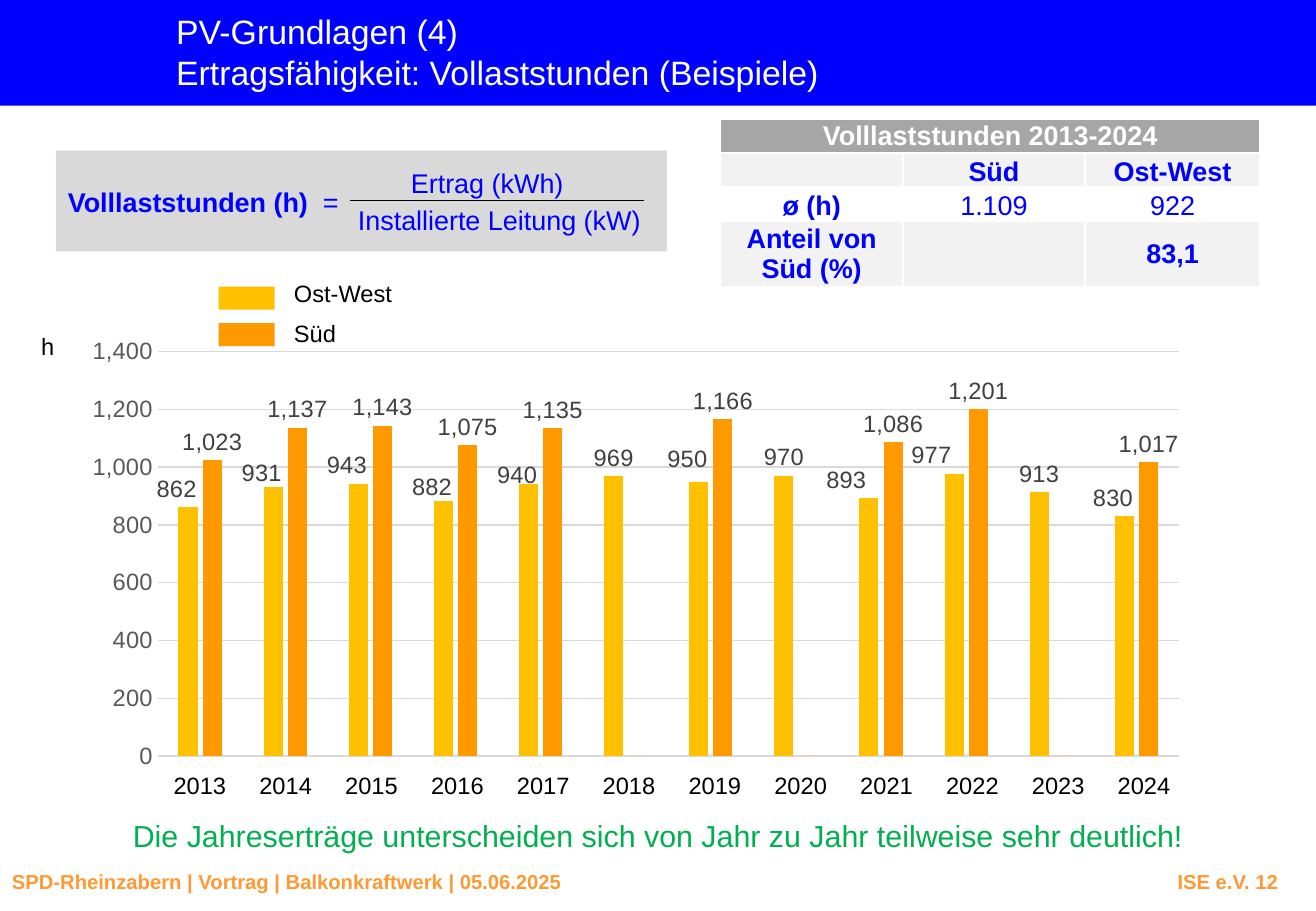
from dataclasses import dataclass

from pptx import Presentation
from pptx.chart.data import CategoryChartData
from pptx.dml.color import RGBColor
from pptx.enum.chart import XL_CHART_TYPE, XL_LABEL_POSITION as LabelPos, XL_TICK_MARK
from pptx.enum.shapes import MSO_CONNECTOR, MSO_SHAPE
from pptx.enum.text import MSO_ANCHOR, MSO_AUTO_SIZE, PP_ALIGN
from pptx.oxml import parse_xml
from pptx.oxml.ns import nsdecls
from pptx.util import Inches, Pt


@dataclass(frozen=True)
class Theme:
    font: str = "Arial"
    blue: str = "0000FF"
    white: str = "FFFFFF"
    black: str = "000000"
    green: str = "00B050"
    footer: str = "FF9933"
    formula_bg: str = "D9D9D9"
    header_bg: str = "A6A6A6"
    cell_bg: str = "F2F2F2"
    grid: str = "D9D9D9"
    axis_text: str = "595959"
    label_text: str = "404040"
    east_west: str = "FFC000"
    south: str = "FF9900"
    title_size: int = 20
    message_size: int = 18
    body_size: int = 16
    chart_size: int = 14
    footer_size: int = 12


THEME = Theme()
EAST_WEST = [862, 931, 943, 882, 940, 969, 950, 970, 893, 977, 913, 830]
SOUTH = [1023, 1137, 1143, 1075, 1135, 0, 1166, 0, 1086, 1201, 0, 1017]
# Label offsets (right, down) as fractions of the chart, by position in EAST_WEST
LABEL_SHIFTS = {0: (-0.01, 0), 1: (-0.01, 0.01), 2: (-0.01, 0), 3: (-0.01, 0.01),
                4: (-0.01, 0.02), 6: (-0.01, -0.01), 8: (-0.02, 0), 9: (-0.02, 0),
                11: (-0.01, 0)}
NUMBER_FORMAT = "#,##0;;"  # zeros stay blank


def style_font(font, size, color, bold=False):
    font.name, font.size, font.bold = THEME.font, Pt(size), bold
    font.color.rgb = RGBColor.from_string(color)


def add_run(paragraph, text, size, color, bold=False):
    run = paragraph.add_run()
    run.text = text
    style_font(run.font, size, color, bold)


def add_rect(slide, left, top, width, height, color):
    rect = slide.shapes.add_shape(MSO_SHAPE.RECTANGLE, Inches(left), Inches(top),
                                  Inches(width), Inches(height))
    rect.shadow.inherit = False
    rect.fill.solid()
    rect.fill.fore_color.rgb = RGBColor.from_string(color)
    rect.line.fill.background()
    return rect


def add_label(slide, left, top, width, height, text, size, color,
              bold=False, align=PP_ALIGN.LEFT, wrap=False):
    box = slide.shapes.add_textbox(Inches(left), Inches(top), Inches(width), Inches(height))
    box.text_frame.word_wrap = wrap
    paragraph = box.text_frame.paragraphs[0]
    paragraph.alignment = align
    add_run(paragraph, text, size, color, bold)
    return box


def add_header(slide):
    band = add_rect(slide, -0.01, 0, 10.84, 0.87, THEME.blue)
    title = slide.shapes.title
    band._element.addnext(title._element)
    title.left, title.top = Inches(1.45), Inches(0.09)
    title.width, title.height = Inches(8.69), Inches(0.67)
    frame = title.text_frame
    frame.margin_left = frame.margin_right = frame.margin_top = frame.margin_bottom = 0
    frame.auto_size, frame.vertical_anchor = MSO_AUTO_SIZE.NONE, MSO_ANCHOR.TOP
    heading = frame.paragraphs[0]
    heading.alignment = PP_ALIGN.LEFT
    add_run(heading, "PV-Grundlagen (4)", THEME.title_size, THEME.white)
    heading.add_line_break()
    add_run(heading, "Ertragsfähigkeit: Vollaststunden (Beispiele)",
            THEME.title_size, THEME.white)


def add_footer(slide):
    footer = add_label(slide, 0, 7.11, 10.83, 0.3,
                       "SPD-Rheinzabern | Vortrag | Balkonkraftwerk | 05.06.2025\tISE e.V. 12",
                       THEME.footer_size, THEME.footer, bold=True, wrap=True)
    properties = footer.text_frame.paragraphs[0]._p.get_or_add_pPr()
    properties.append(parse_xml(
        f'<a:tabLst {nsdecls("a")}><a:tab pos="{Inches(10.42)}" algn="r"/></a:tabLst>'))


def add_formula(slide):
    add_rect(slide, 0.46, 1.24, 5.03, 0.83, THEME.formula_bg)
    text_style = (THEME.body_size, THEME.blue)
    add_label(slide, 0.46, 1.48, 2.18, 0.37, "Volllaststunden (h)", *text_style, bold=True)
    add_label(slide, 2.56, 1.48, 0.33, 0.37, "=", *text_style)
    add_label(slide, 3.27, 1.32, 1.48, 0.37, "Ertrag (kWh)", *text_style,
              align=PP_ALIGN.CENTER)
    add_label(slide, 2.83, 1.63, 2.56, 0.37, "Installierte Leitung (kW)", *text_style,
              align=PP_ALIGN.CENTER)
    fraction_bar = slide.shapes.add_connector(
        MSO_CONNECTOR.STRAIGHT, Inches(2.88), Inches(1.65), Inches(5.3), Inches(1.65))
    fraction_bar.line.color.rgb = RGBColor.from_string(THEME.black)
    fraction_bar.line.width = Pt(1)
    fraction_bar._element.spPr.append(parse_xml(f'<a:effectLst {nsdecls("a")}/>'))


def fill_cell(cell, text, fill, color, bold, anchor):
    cell.margin_left = cell.margin_right = cell.margin_top = Inches(0.01)
    cell.margin_bottom = 0
    cell.vertical_anchor = anchor
    cell.fill.solid()
    cell.fill.fore_color.rgb = RGBColor.from_string(fill)
    for position, side in enumerate(("lnL", "lnR", "lnT", "lnB")):
        cell._tc.tcPr.insert(position, parse_xml(
            f'<a:{side} {nsdecls("a")} w="{Pt(1)}"><a:solidFill>'
            f'<a:srgbClr val="{THEME.white}"/></a:solidFill></a:{side}>'))
    paragraph = cell.text_frame.paragraphs[0]
    paragraph.alignment = PP_ALIGN.CENTER
    if text:
        add_run(paragraph, text, THEME.body_size, color, bold)
    else:
        paragraph._p.append(parse_xml(
            f'<a:endParaRPr {nsdecls("a")} sz="{THEME.body_size * 100}"/>'))


def add_summary_table(slide):
    rows = [
        (0.28, THEME.header_bg, MSO_ANCHOR.MIDDLE, ("Volllaststunden 2013-2024", "", "")),
        (0.28, THEME.cell_bg, MSO_ANCHOR.BOTTOM, ("", "Süd", "Ost-West")),
        (0.28, THEME.white, MSO_ANCHOR.BOTTOM, ("ø (h)", "1.109", "922")),
        (0.54, THEME.cell_bg, MSO_ANCHOR.MIDDLE, ("Anteil von Süd (%)", "", "83,1")),
    ]
    table = slide.shapes.add_table(len(rows), 3, Inches(5.93), Inches(0.98),
                                   Inches(4.44), Inches(1.38)).table
    table.first_row = table.horz_banding = False
    for column, width in zip(table.columns, (1.5, 1.5, 1.44)):
        column.width = Inches(width)
    for r, (height, fill, anchor, texts) in enumerate(rows):
        table.rows[r].height = Inches(height)
        for c, text in enumerate(texts):
            color = THEME.white if r == 0 else THEME.blue
            fill_cell(table.cell(r, c), text, fill, color, text not in ("1.109", "922"), anchor)
    table.cell(0, 0).merge(table.cell(0, 2))


def manual_layout(x, y, extra=""):
    return parse_xml(f'<c:layout {nsdecls("c")}><c:manualLayout>{extra}'
                     f'<c:x val="{x}"/><c:y val="{y}"/></c:manualLayout></c:layout>')


def set_plot_area(chart):
    """Fix the inner plot area so that the columns stand above the year labels."""
    plot_area = chart._chartSpace.chart.plotArea
    for old in plot_area.findall("{*}layout"):
        plot_area.remove(old)
    layout = manual_layout(0.08, 0.05, '<c:layoutTarget val="inner"/>'
                           '<c:xMode val="edge"/><c:yMode val="edge"/>')
    for size in ("w", "h"):
        layout[0].append(parse_xml(f'<c:{size} {nsdecls("c")} val="0.9"/>'))
    plot_area.insert(0, layout)


def add_yield_chart(slide):
    data = CategoryChartData(number_format="#,##0")
    data.categories = [str(n) for n in range(1, len(EAST_WEST) + 1)]
    data.add_series("Series 1", EAST_WEST)
    data.add_series("Series 2", SOUTH)
    chart = slide.shapes.add_chart(XL_CHART_TYPE.COLUMN_CLUSTERED, Inches(0.55), Inches(2.71),
                                   Inches(9.34), Inches(3.7), data).chart
    chart.has_legend = chart.has_title = False
    style_font(chart.font, THEME.chart_size, THEME.black)
    set_plot_area(chart)
    chart.category_axis.visible = False
    hours = chart.value_axis
    hours.minimum_scale, hours.maximum_scale, hours.major_unit = 0, 1400, 200
    hours.major_tick_mark = hours.minor_tick_mark = XL_TICK_MARK.NONE
    hours.format.line.fill.background()
    hours.major_gridlines.format.line.color.rgb = RGBColor.from_string(THEME.grid)
    hours.major_gridlines.format.line.width = Pt(0.75)
    hours.tick_labels.number_format = "#,##0"
    hours.tick_labels.number_format_is_linked = False
    style_font(hours.tick_labels.font, THEME.chart_size, THEME.axis_text)
    plot = chart.plots[0]
    plot.gap_width, plot.overlap, plot.vary_by_categories = 219, -27, False
    for series, color in zip(plot.series, (THEME.east_west, THEME.south)):
        series.format.fill.solid()
        series.format.fill.fore_color.rgb = RGBColor.from_string(color)
        labels = series.data_labels
        labels.show_value, labels.position = True, LabelPos.OUTSIDE_END
        labels.number_format, labels.number_format_is_linked = NUMBER_FORMAT, False
        style_font(labels.font, THEME.chart_size, THEME.label_text)
    for index, shift in LABEL_SHIFTS.items():
        label = plot.series[0].points[index].data_label
        style_font(label.font, THEME.chart_size, THEME.label_text)
        label.position = LabelPos.OUTSIDE_END
        label._dLbl.insert(1, manual_layout(*shift))


def add_chart_labels(slide):
    text_style = (THEME.chart_size, THEME.black)
    year_pitch = (9.1 - 1.33) / 11
    for i, year in enumerate(range(2013, 2025)):
        add_label(slide, 1.33 + i * year_pitch, 6.3, 0.64, 0.34, str(year), *text_style)
    add_label(slide, 0.24, 2.68, 0.31, 0.34, "h", *text_style)
    for name, color, key_top, text_top, width in (
            ("Ost-West", THEME.east_west, 2.36, 2.25, 1.02),
            ("Süd", THEME.south, 2.66, 2.58, 0.55)):
        add_rect(slide, 1.8, key_top, 0.46, 0.19, color)
        add_label(slide, 2.32, text_top, width, 0.34, name, *text_style)


def main():
    deck = Presentation()
    deck.slide_width, deck.slide_height = Inches(10.83), Inches(7.5)
    slide = deck.slides.add_slide(deck.slide_layouts[5])
    add_header(slide)
    add_footer(slide)
    add_formula(slide)
    add_summary_table(slide)
    add_label(slide, 0, 6.68, 10.83, 0.4,
              "Die Jahreserträge unterscheiden sich von Jahr zu Jahr teilweise sehr deutlich!",
              THEME.message_size, THEME.green, align=PP_ALIGN.CENTER, wrap=True)
    add_yield_chart(slide)
    add_chart_labels(slide)
    deck.save("out.pptx")


if __name__ == "__main__":
    main()
